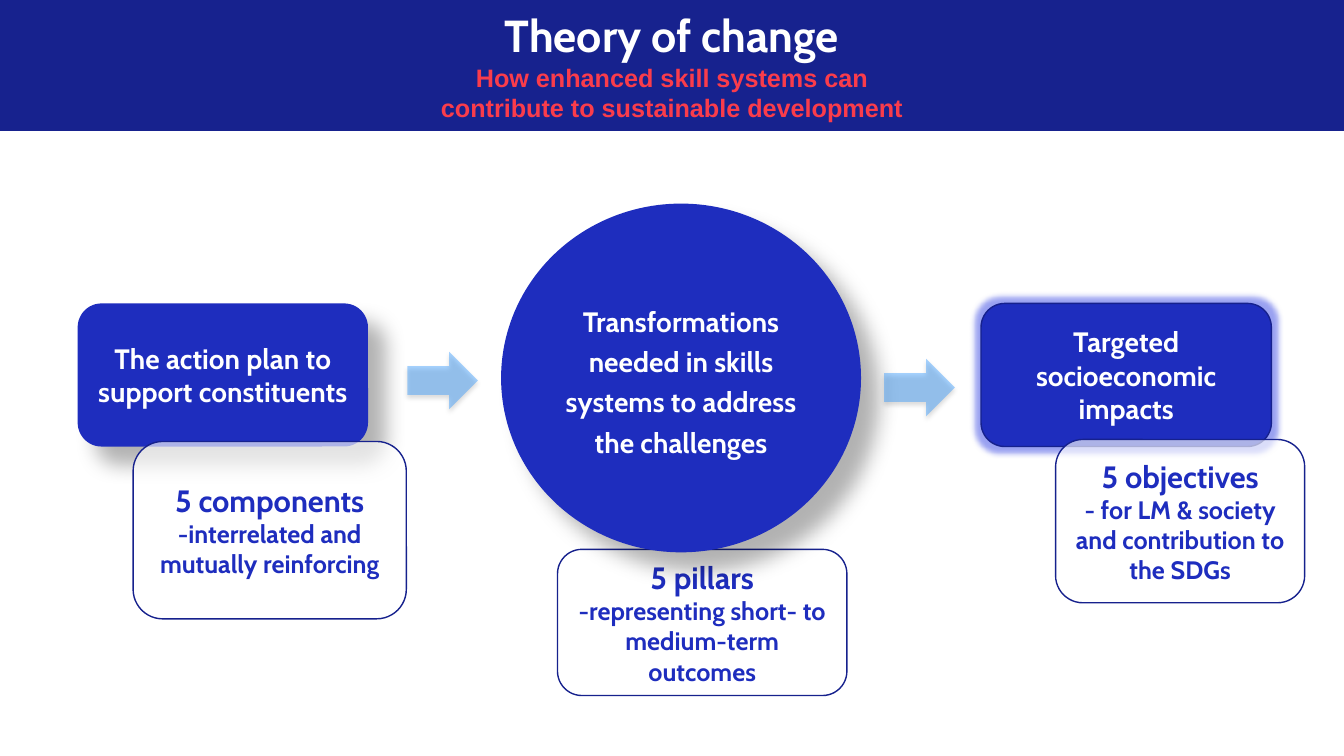
from dataclasses import dataclass

from pptx import Presentation
from pptx.dml.color import RGBColor as Rgb
from pptx.enum.shapes import MSO_SHAPE as Kind
from pptx.enum.text import MSO_ANCHOR as Anchor, PP_ALIGN as Align
from pptx.oxml.ns import qn
from pptx.oxml.xmlchemy import OxmlElement as Node
from pptx.util import Inches, Pt


@dataclass(frozen=True)
class Theme:
    band: str = "17228E"
    blue: str = "1E2DBE"
    edge: str = "16218D"
    white: str = "FFFFFF"
    red: str = "FA3C4B"
    arrow: str = "3399FF"
    glow: str = "5663E8"
    black: str = "000000"
    face: str = "Cabin"
    plain: str = "Arial"
    title: int = 32
    head: int = 22
    body: int = 20
    note: int = 18


LOOK = Theme()
DEEP = dict(alpha=30, blur=15, dist=18, angle=45)
SOFT = dict(alpha=32, blur=3.5, dist=2.2, angle=90)


def add_alpha(color, pct):
    alpha = Node("a:alpha")
    alpha.set("val", str(pct * 1000))
    color.append(alpha)


def add_effect(shape, tag, color, alpha, **attrs):
    """Put a shadow or glow in the shape's effect list."""
    effect, tint = Node(tag), Node("a:srgbClr")
    for name, value in attrs.items():
        effect.set(name, str(value))
    tint.set("val", color)
    add_alpha(tint, alpha)
    effect.append(tint)
    shape._element.spPr.find(qn("a:effectLst")).append(effect)


def add_shadow(shape, alpha, blur, dist, angle):
    add_effect(shape, "a:outerShdw", LOOK.black, alpha, blurRad=Pt(blur),
               dist=Pt(dist), dir=angle * 60000, algn="tl", rotWithShape=0)


def add_form(slide, kind, box, fill, alpha=None, edge=None, shadow=None):
    form = slide.shapes.add_shape(kind, *map(Inches, box))
    form.shadow.inherit = False
    form.fill.solid()
    form.fill.fore_color.rgb = Rgb.from_string(fill)
    if alpha:
        add_alpha(form._element.spPr.find(qn("a:solidFill"))[0], alpha)
    if edge:
        form.line.color.rgb = Rgb.from_string(edge)
        form.line.width = Pt(1)
    else:
        form.line.fill.background()
    if shadow:
        add_shadow(form, **shadow)
    return form


def style(run, size, color, face=LOOK.face):
    for name, value in dict(size=Pt(size), name=face, bold=True).items():
        setattr(run.font, name, value)
    run.font.color.rgb = Rgb.from_string(color)


def write(shape, lines, color, space=1.0):
    """Fill a shape with centred (text, size) paragraphs."""
    frame = shape.text_frame
    frame.word_wrap = True
    frame.vertical_anchor = Anchor.MIDDLE
    for i, (text, size) in enumerate(lines):
        para = frame.add_paragraph() if i else frame.paragraphs[0]
        para.alignment = Align.CENTER
        para.line_spacing = space
        run = para.add_run()
        run.text = text
        style(run, size, color)


def add_banner(slide, box, title, lines):
    left, top, width, height = box
    add_form(slide, Kind.RECTANGLE, box, LOOK.band)
    area = (left, top + 0.15, width, 0.79)
    frame = slide.shapes.add_textbox(*map(Inches, area)).text_frame
    frame.word_wrap = True
    for side in ("left", "top", "right", "bottom"):
        setattr(frame, f"margin_{side}", 0)
    para = frame.paragraphs[0]
    para.alignment = Align.CENTER
    run = para.add_run()
    run.text = title
    style(run, LOOK.title, LOOK.white)
    for line in lines:
        para.add_line_break()
        run = para.add_run()
        run.text = line
        style(run, LOOK.note, LOOK.red, LOOK.plain)


def add_stage(slide, box, text, kind=Kind.ROUNDED_RECTANGLE, space=1.0,
              **looks):
    stage = add_form(slide, kind, box, LOOK.blue, **looks)
    write(stage, [(text, LOOK.body)], LOOK.white, space)
    return stage


def add_card(slide, box, head, note):
    card = add_form(slide, Kind.ROUNDED_RECTANGLE, box, LOOK.white,
                    alpha=64, edge=LOOK.edge)
    write(card, [(head, LOOK.head), (note, LOOK.note)], LOOK.blue)


def add_arrow(slide, left, top):
    add_form(slide, Kind.RIGHT_ARROW, (left, top, 0.7, 0.57), LOOK.arrow,
             alpha=43, shadow=SOFT)


def main():
    deck = Presentation()
    deck.slide_width, deck.slide_height = Inches(13.33), Inches(7.5)
    slide = deck.slides.add_slide(deck.slide_layouts[6])

    add_banner(slide, (0, -0.07, 13.33, 1.37), "Theory of change",
               ["How enhanced skill systems can",
                "contribute to sustainable development"])

    # Action plan
    add_stage(slide, (0.77, 3.01, 2.88, 1.42),
              "The action plan to support constituents", shadow=DEEP)
    add_card(slide, (1.32, 4.38, 2.71, 1.76), "5 components",
             "-interrelated and mutually reinforcing")

    # Transformations: the circle lies over its card
    add_card(slide, (5.53, 5.45, 2.87, 1.45), "5 pillars",
             "-representing short- to medium-term outcomes")
    add_stage(slide, (4.97, 2.02, 3.57, 3.46),
              "Transformations needed in skills systems to address "
              "the challenges", Kind.OVAL, 1.2, shadow=DEEP)

    # Impacts
    goal = add_stage(slide, (9.73, 3.01, 2.88, 1.42),
                     "Targeted socioeconomic impacts", edge=LOOK.edge)
    add_effect(goal, "a:glow", LOOK.glow, 60, rad=Pt(8))
    add_card(slide, (10.47, 4.36, 2.47, 1.62), "5 objectives",
             "- for LM & society and contribution to the SDGs")

    # Arrows between the stages
    for left, top in ((4.04, 3.49), (8.77, 3.56)):
        add_arrow(slide, left, top)

    deck.save("out.pptx")


if __name__ == "__main__":
    main()
